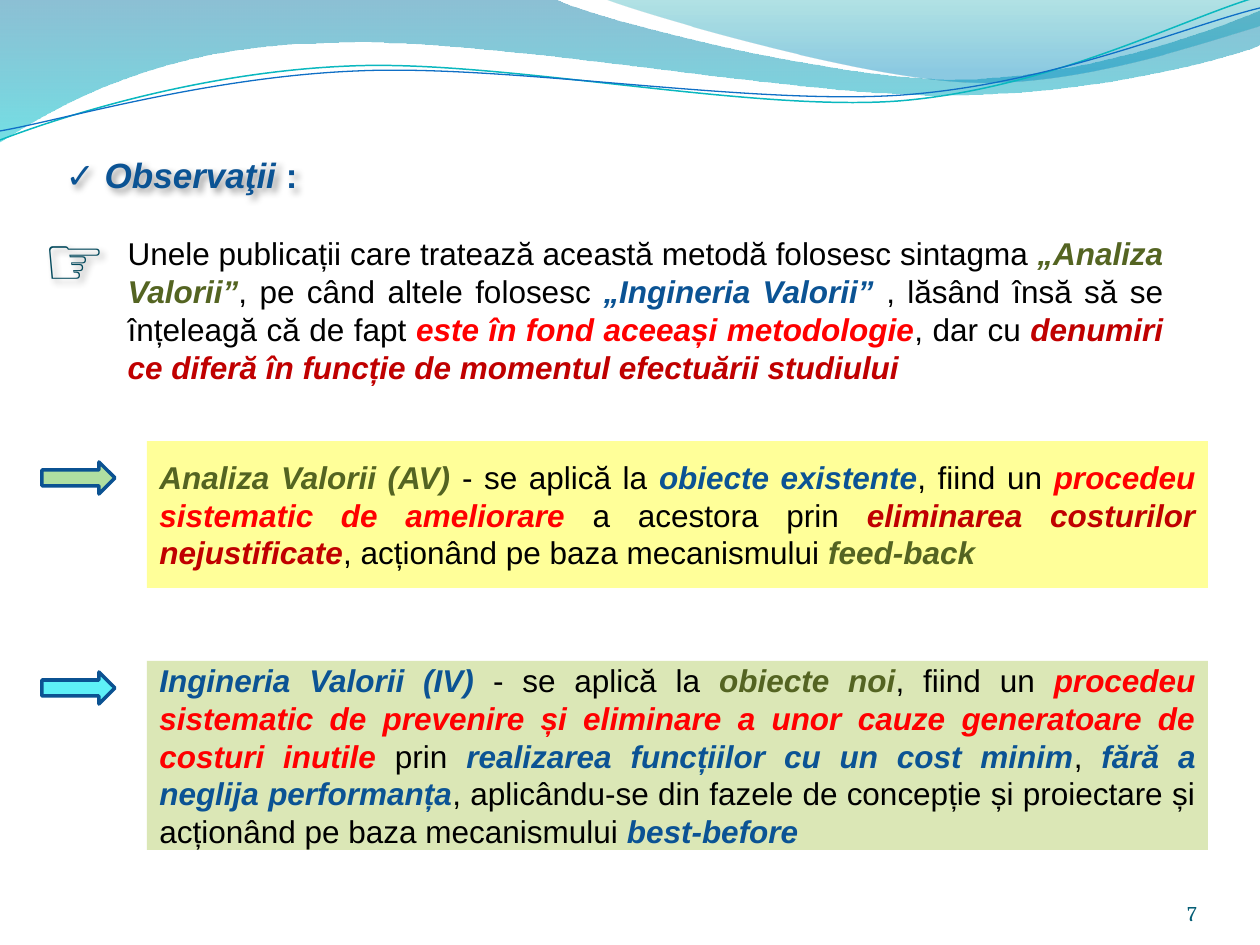
from lxml import etree
from pptx import Presentation, util as u
from pptx.dml.color import RGBColor
from pptx.enum import shapes, text
from pptx.oxml.ns import qn

PX = 914400 / 126
BLACK = RGBColor(0, 0, 0)
OLIVE = RGBColor(0x54, 0x64, 0x22)
BLUE = RGBColor(0x0B, 0x53, 0x94)
RED = RGBColor(0xFF, 0, 0)
DARK = RGBColor(0xC0, 0, 0)
TEAL = RGBColor(0x03, 0x49, 0x5C)
PAGE = RGBColor(0x04, 0x5D, 0x75)
EDGE = RGBColor(0x0B, 0x52, 0x92)
YELLOW = RGBColor(0xFF, 0xFF, 0x99)
LIME = RGBColor(0xDB, 0xE7, 0xB6)
GREEN = RGBColor(0xB0, 0xDF, 0xA1)
CYAN = RGBColor(0x5E, 0xF0, 0xF7)
SKY = RGBColor(0, 0x74, 0xA1)
AQUA = RGBColor(0, 0xC6, 0xCF)
SEA = RGBColor(0, 0xA1, 0xA9)
AZURE = RGBColor(0, 0x8B, 0xBF)
MINT = RGBColor(0x0A, 0xB8, 0xBF)
NAVY = RGBColor(0x0F, 0x6F, 0xC6)


def box(*vals):
    return [round(v * PX) for v in vals]


def write(shape, runs, size, align, anchor, font="Arial"):
    """Fill a shape with (text, colour, bold, italic) runs."""
    frame = shape.text_frame
    frame.auto_size = text.MSO_AUTO_SIZE.NONE
    frame.vertical_anchor = anchor
    para = frame.paragraphs[0]
    para.alignment = align
    para.space_before = u.Pt(0)
    for words, color, bold, slant in runs:
        run = para.add_run()
        run.text = words
        run.font.name, run.font.size = font, u.Pt(size)
        run.font.bold, run.font.italic = bold, slant
        run.font.color.rgb = color
    return para


deck = Presentation()
deck.slide_width, deck.slide_height = box(1260, 945)
slide = deck.slides.add_slide(deck.slide_layouts[1])
tree = slide.shapes
MID, TOP = text.MSO_ANCHOR.MIDDLE, text.MSO_ANCHOR.TOP
LEFT, FULL = text.PP_ALIGN.LEFT, text.PP_ALIGN.JUSTIFY

# Waves: two numbers are a straight step, six are a Bezier step
waves = [
    ([(0, 0), (554, -1), (600, 21, 837, 79, 955, 79),
      (1075, 79, 1207, 33, 1260, 11), (1261, 45),
      (1239, 55, 1096, 96, 940, 95), (783, 95, 481, 35, 324, 43),
      (163, 45, 58, 105, -1, 142)],
     [(0, SKY, 45), (1, AQUA, 55)], None),
    ([(604, -1), (641, 14, 859, 78, 969, 82),
      (1079, 87, 1211, 40, 1260, 26), (1260, 0)],
     [(0, SEA, 30), (0.8, AZURE, 45)], None),
    ([(0, 140), (60, 117, 199, 72, 349, 66), (498, 59, 747, 112, 898, 101),
      (1049, 89, 1182, 19, 1257, -3)], None, (MINT, 0.85)),
    ([(0, 131), (59, 121, 207, 77, 357, 71), (508, 64, 752, 106, 903, 95),
      (1053, 84, 1186, 26, 1260, 8)], None, (NAVY, 0.75)),
]
for steps, stops, line in waves:
    dots = [step[i:i + 2] for step in steps for i in range(0, len(step), 2)]
    pen = tree.build_freeform(*dots[0], scale=PX)
    pen.add_line_segments(dots[1:], close=bool(stops))
    wave = pen.convert_to_shape()
    wave.shadow.inherit = False
    # Join each three points of a Bezier step into one curve
    legs = iter(list(wave._element.iter(qn("a:lnTo"))))
    for step in steps[1:]:
        leg = next(legs)
        if len(step) == 6:
            curve = etree.Element(qn("a:cubicBezTo"))
            leg.addprevious(curve)
            for part in (leg, next(legs), next(legs)):
                curve.append(part[0])
                part.getparent().remove(part)
    if stops:
        wave.line.fill.background()
        wave.fill.gradient()
        wave.fill.gradient_angle = 270
        for stop, (place, tone, alpha) in zip(wave.fill.gradient_stops, stops):
            stop.position = place
            stop.color.rgb = tone
        tones = list(wave._element.spPr.iter(qn("a:srgbClr")))
        for node, (place, tone, alpha) in zip(tones, stops):
            etree.SubElement(node, qn("a:alpha"), val=str(alpha * 1000))
    else:
        wave.fill.background()
        wave.line.color.rgb = line[0]
        wave.line.width = u.Pt(line[1])

# Heading
head = tree.title
head.left, head.top, head.width, head.height = box(53, 147, 290, 55)
write(head, [("✓ Observaţii ", BLUE, True, True), (":", BLUE, True, False)],
      20, LEFT, TOP)

# Opening paragraph
body = slide.placeholders[1]
body.left, body.top, body.width, body.height = box(115, 231, 1061, 158)
para = write(body, [
    ("Unele publicații care tratează această metodă folosesc sintagma ", BLACK, False, False),
    ("„Analiza Valorii”", OLIVE, True, True),
    (", pe când altele folosesc ", BLACK, False, False),
    ("„Ingineria Valorii” ", BLUE, True, True),
    (", lăsând însă să se înțeleagă că de fapt ", BLACK, False, False),
    ("este în fond aceeași metodologie", RED, True, True),
    (", dar cu ", BLACK, False, False),
    ("denumiri ce diferă în funcție de momentul efectuării studiului", DARK, True, True),
], 18, FULL, MID)
props = para._p.get_or_add_pPr()
props.set("marL", "0")
props.set("indent", "0")
etree.SubElement(props, qn("a:buNone"))

# Pointing hand
hand = tree.add_textbox(*box(31, 210, 92, 97))
write(hand, [("☞", TEAL, True, False)], 40, LEFT, TOP)
hand.text_frame.word_wrap = False

# Soft shadow under the heading and the hand
for item in (head, hand):
    item.fill.background()
    item.shadow.inherit = False
    effect = item._element.spPr.find(qn("a:effectLst"))
    shade = etree.SubElement(effect, qn("a:outerShdw"), blurRad="50800",
                             dist="38100", dir="2700000", algn="tl")
    tint = etree.SubElement(shade, qn("a:srgbClr"), val="000000")
    etree.SubElement(tint, qn("a:alpha"), val="40000")

# Definitions, each with its arrow
cards = [
    (441, 147, YELLOW, 462, GREEN, [
        ("Analiza Valorii (AV) ", OLIVE, True, True),
        ("- se aplică la ", BLACK, False, False),
        ("obiecte existente", BLUE, True, True),
        (", fiind un ", BLACK, False, False),
        ("procedeu sistematic de ameliorare", RED, True, True),
        (" a acestora prin ", BLACK, False, False),
        ("eliminarea costurilor nejustificate", DARK, True, True),
        (", acționând pe baza mecanismului ", BLACK, False, False),
        ("feed-back ", OLIVE, True, True)]),
    (661, 189, LIME, 672, CYAN, [
        ("Ingineria Valorii (IV) ", BLUE, True, True),
        ("- se aplică la ", BLACK, False, False),
        ("obiecte noi", OLIVE, True, True),
        (", fiind un ", BLACK, False, False),
        ("procedeu sistematic de prevenire și eliminare a unor cauze "
         "generatoare de costuri inutile", RED, True, True),
        (" prin ", BLACK, False, False),
        ("realizarea funcțiilor cu un cost minim", BLUE, True, True),
        (", ", BLACK, False, False),
        ("fără a neglija performanța", BLUE, True, True),
        (", aplicându-se din fazele de concepție și proiectare și "
         "acționând pe baza mecanismului ", BLACK, False, False),
        ("best-before", BLUE, True, True)]),
]
for top, tall, back, spot, tone, runs in cards:
    card = tree.add_shape(shapes.MSO_SHAPE.RECTANGLE, *box(147, top, 1061, tall))
    card.line.fill.background()
    write(card, runs, 18, FULL, MID)
    arrow = tree.add_shape(shapes.MSO_SHAPE.RIGHT_ARROW, *box(42, spot, 73, 32))
    arrow.line.color.rgb = EDGE
    arrow.line.width = u.Pt(2)
    for item, paint in ((card, back), (arrow, tone)):
        item.shadow.inherit = False
        item.fill.solid()
        item.fill.fore_color.rgb = paint

# Page number
num = tree.add_textbox(*box(1092, 876, 105, 50))
frame = num.text_frame
frame.word_wrap = True
frame.margin_left = frame.margin_right = frame.margin_top = frame.margin_bottom = 0
write(num, [("7", PAGE, False, False)], 12, text.PP_ALIGN.RIGHT,
      text.MSO_ANCHOR.BOTTOM, font="Cambria")

deck.save("out.pptx")
